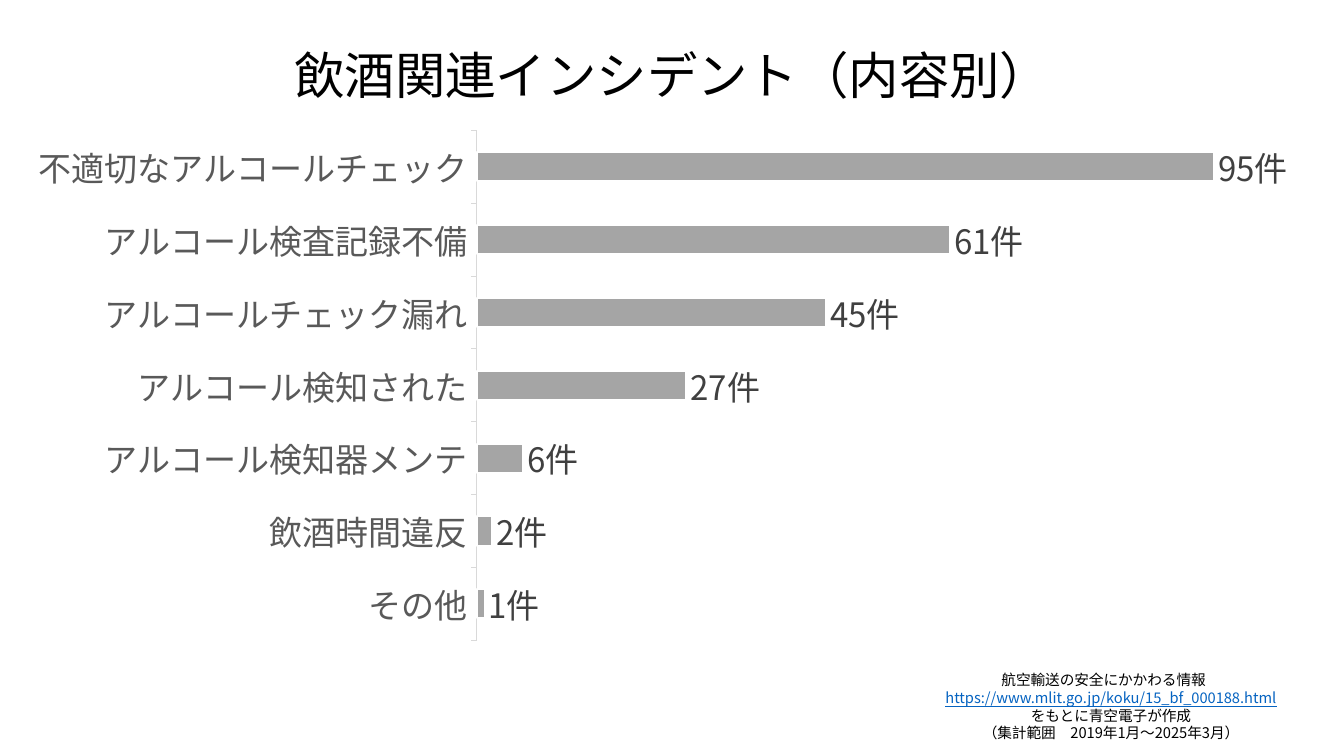
import pptx
import pptx.chart.data
import pptx.dml.color
import pptx.enum.chart
import pptx.enum.text
import pptx.oxml
import pptx.oxml.ns
import pptx.util
from pptx.util import Cm

COLORS = {"text": "000000", "link": "0563C1", "category": "595959",
          "value": "404040", "bar": "A5A5A5", "axis": "D9D9D9", "edge": "FFFFFF"}
FONT = "Noto Sans CJK JP"
COUNT_FORMAT = '#"件"'
INCIDENTS = {"その他": 1, "飲酒時間違反": 2, "アルコール検知器メンテ": 6,
             "アルコール検知された": 27, "アルコールチェック漏れ": 45,
             "アルコール検査記録不備": 61, "不適切なアルコールチェック": 95}
PLOT_AREA = {"x": 0.36, "y": 0.01, "w": 0.63, "h": 0.94}


def rgb(name):
    return pptx.dml.color.RGBColor.from_string(COLORS[name])


class IncidentSlide:
    def __init__(self, prs):
        self.slide = prs.slides.add_slide(prs.slide_layouts[6])

    def style(self, font, size, color):
        font.name, font.size = FONT, pptx.util.Pt(size)
        font.color.rgb = rgb(color)
        # East Asian glyphs take their typeface from a:ea
        props = font._element
        latin = props.find(pptx.oxml.ns.qn("a:latin"))
        latin.addnext(pptx.oxml.parse_xml(
            f'<a:ea {pptx.oxml.ns.nsdecls("a")} typeface="{FONT}"/>'))

    def text(self, box, lines, size, spacing=None,
             anchor=pptx.enum.text.MSO_ANCHOR.TOP):
        frame = self.slide.shapes.add_textbox(*map(Cm, box)).text_frame
        frame.word_wrap = True
        frame.vertical_anchor = anchor
        for i, runs in enumerate(lines):
            paragraph = frame.add_paragraph() if i else frame.paragraphs[0]
            paragraph.alignment = pptx.enum.text.PP_ALIGN.CENTER
            paragraph.line_spacing = spacing
            for j, (words, color) in enumerate(runs):
                if j:
                    paragraph.add_line_break()
                run = paragraph.add_run()
                run.text = words
                self.style(run.font, size, color)
                if color == "link":
                    run.font.underline = True

    def bar_chart(self, box, counts):
        data = pptx.chart.data.CategoryChartData(number_format=COUNT_FORMAT)
        data.categories = list(counts)
        data.add_series("件数", list(counts.values()))
        chart = self.slide.shapes.add_chart(
            pptx.enum.chart.XL_CHART_TYPE.BAR_CLUSTERED, *map(Cm, box), data).chart
        chart.has_legend = chart.has_title = False
        self.style(chart.font, 10, "text")

        # Axes
        categories = chart.category_axis
        categories.major_tick_mark = pptx.enum.chart.XL_TICK_MARK.OUTSIDE
        categories.format.line.color.rgb = rgb("axis")
        categories.format.line.width = pptx.util.Pt(0.75)
        self.style(categories.tick_labels.font, 24, "category")
        chart.value_axis.has_major_gridlines = False
        chart.value_axis.minimum_scale = 0
        chart.value_axis.visible = False

        # Bars and their counts
        plot = chart.plots[0]
        plot.gap_width, plot.vary_by_categories = 150, False
        bars = plot.series[0]
        bars.format.fill.solid()
        bars.format.fill.fore_color.rgb = rgb("bar")
        bars.format.line.color.rgb = rgb("edge")
        bars.format.line.width = pptx.util.Pt(1.5)
        labels = bars.data_labels
        labels.show_value = True
        labels.number_format, labels.number_format_is_linked = COUNT_FORMAT, False
        labels.position = pptx.enum.chart.XL_LABEL_POSITION.OUTSIDE_END
        self.style(labels.font, 24, "value")

        # Fixed inner plot area
        area = chart._chartSpace.chart.plotArea
        for old in area.findall(pptx.oxml.ns.qn("c:layout")):
            area.remove(old)
        modes = '<c:xMode val="edge"/><c:yMode val="edge"/>'
        sizes = "".join(f'<c:{key} val="{part}"/>' for key, part in PLOT_AREA.items())
        area.insert(0, pptx.oxml.parse_xml(
            f'<c:layout {pptx.oxml.ns.nsdecls("c")}><c:manualLayout>'
            f'<c:layoutTarget val="inner"/>{modes}{sizes}</c:manualLayout></c:layout>'))


def main():
    prs = pptx.Presentation()
    prs.slide_width, prs.slide_height = Cm(33.87), Cm(19.05)
    page = IncidentSlide(prs)

    # Title
    page.text((2.34, 1.02, 29.21, 1.9), [[("飲酒関連インシデント（内容別）", "text")]],
              36, 0.9, pptx.enum.text.MSO_ANCHOR.MIDDLE)

    # Incidents by kind
    page.bar_chart((0.84, 3.15, 31.62, 13.67), INCIDENTS)

    # Source note
    page.text((19.53, 16.79, 16.94, 2.06), [
        [("航空輸送の安全にかかわる情報　", "text")],
        [("https://www.mlit.go.jp/koku/15_bf_000188.html", "link"),
         ("をもとに青空電子が作成", "text")],
        [("（集計範囲　2019年1月～2025年3月）", "text")]], 10.5)

    prs.save("out.pptx")


if __name__ == "__main__":
    main()
